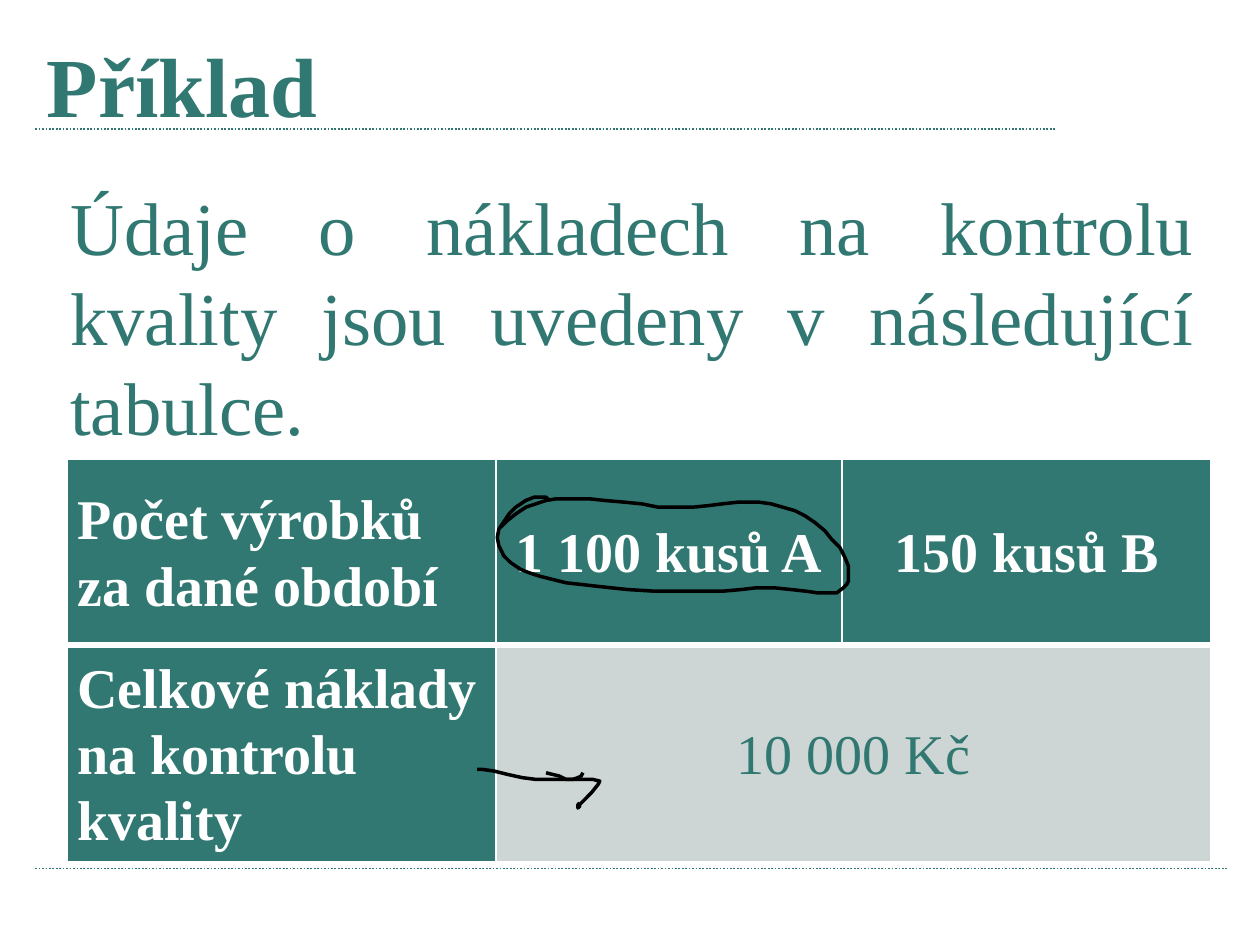
from lxml import etree
from pptx import Presentation
from pptx import util as u
from pptx.dml.color import RGBColor
from pptx.enum import dml, shapes, text
from pptx.oxml import ns

TEAL = RGBColor(0x30, 0x78, 0x71)
PALE = RGBColor(0xCD, 0xD6, 0xD5)
WHITE = RGBColor(0xFF, 0xFF, 0xFF)
BLACK = RGBColor(0, 0, 0)
FONT = "Times New Roman"
LEFT, MID, JUST = text.PP_ALIGN.LEFT, text.PP_ALIGN.CENTER, text.PP_ALIGN.JUSTIFY

WIDE = 7.5
TITLE = "Příklad"
INTRO = "Údaje o nákladech na kontrolu kvality jsou uvedeny v následující tabulce."
ROWS = [
    ["Počet výrobků za dané období", "1\u00a0100 kusů A", "150 kusů B"],
    ["Celkové náklady na kontrolu kvality", "10\u00a0000 Kč"],
]
WIDTHS = [2.55, 2.06, 2.2]
HEIGHTS = [1.11, 1.29]
RULES = [(0.21, 6.29, 0.77), (0.21, 7.31, 5.17)]

HEAD = [
    (3.25, 4.6), (3.29, 4.61), (3.33, 4.62), (3.37, 4.64), (3.53, 4.64),
    (3.57, 4.65), (3.56, 4.67), (3.52, 4.72), (3.48, 4.76), (3.45, 4.79),
    (3.45, 4.8), (3.44, 4.81), (3.44, 4.79), (3.45, 4.78),
]
SHAFT = [
    (2.84, 4.58), (2.87, 4.58), (2.94, 4.59), (3.02, 4.61), (3.11, 4.63),
    (3.19, 4.64), (3.41, 4.64), (3.44, 4.63), (3.46, 4.62), (3.47, 4.6),
]
LOOP = [
    (3.27, 2.98), (3.25, 2.96), (3.18, 2.96), (3.13, 2.98), (3.07, 3.02),
    (3.03, 3.06), (2.99, 3.12), (2.97, 3.15), (2.96, 3.2), (2.97, 3.25),
    (3, 3.31), (3.04, 3.35), (3.1, 3.39), (3.15, 3.41), (3.21, 3.43),
    (3.29, 3.45), (3.37, 3.47), (3.46, 3.48), (3.55, 3.49), (3.64, 3.5),
    (3.74, 3.51), (3.9, 3.52), (4.3, 3.52), (4.41, 3.51), (4.5, 3.5),
    (4.61, 3.5), (4.71, 3.51), (4.8, 3.52), (4.87, 3.53), (4.98, 3.53),
    (5.02, 3.5), (5.04, 3.48), (5.05, 3.46), (5.05, 3.37), (5.03, 3.32),
    (5, 3.26), (4.95, 3.21), (4.91, 3.16), (4.85, 3.11), (4.79, 3.07),
    (4.73, 3.04), (4.66, 3.02), (4.59, 3), (4.52, 2.99), (4.39, 2.99),
    (4.3, 3), (4.22, 3.01), (4.12, 3.02), (3.92, 3.02), (3.82, 3),
    (3.72, 2.99), (3.6, 2.98), (3.51, 2.97), (3.31, 2.97), (3.25, 2.98),
    (3.19, 3), (3.13, 3.02), (3.07, 3.06), (3.02, 3.1), (2.98, 3.14),
]


def write(frame, words, size, color, bold, align, gap=1.0):
    frame.word_wrap = True
    para = frame.paragraphs[0]
    para.text = words
    para.alignment = align
    para.line_spacing = gap
    font = para.font
    font.name, font.size, font.bold = FONT, u.Pt(size), bold
    font.color.rgb = color


def box(slide, place, *style):
    frame = slide.shapes.add_textbox(*map(u.Inches, place)).text_frame
    write(frame, *style)


def rule(slide, left, right, top):
    line = slide.shapes.add_connector(
        shapes.MSO_CONNECTOR.STRAIGHT, *map(u.Inches, (left, top, right, top)))
    line.line.color.rgb = TEAL
    line.line.width = u.Pt(0.75)
    line.line.dash_style = dml.MSO_LINE.ROUND_DOT
    etree.SubElement(line._element.spPr, ns.qn("a:effectLst"))


def edge(cell, widths):
    props = cell._tc.get_or_add_tcPr()
    for spot, (side, wide) in enumerate(zip("LRTB", widths)):
        line = etree.Element(ns.qn("a:ln" + side), w=str(u.Pt(wide)))
        fill = etree.SubElement(line, ns.qn("a:solidFill"))
        etree.SubElement(fill, ns.qn("a:srgbClr"), val=str(WHITE))
        props.insert(spot, line)


def grid(slide):
    place = (0.4, 2.73, sum(WIDTHS), sum(HEIGHTS))
    table = slide.shapes.add_table(
        len(HEIGHTS), len(WIDTHS), *map(u.Inches, place)).table
    for col, wide in zip(table.columns, WIDTHS):
        col.width = u.Inches(wide)
    for row, high in zip(table.rows, HEIGHTS):
        row.height = u.Inches(high)
    table.cell(1, 1).merge(table.cell(1, 2))
    for r, row in enumerate(ROWS):
        for c, words in enumerate(row):
            cell = table.cell(r, c)
            plain = r > 0 and c > 0
            cell.fill.solid()
            cell.fill.fore_color.rgb = PALE if plain else TEAL
            cell.vertical_anchor = text.MSO_ANCHOR.MIDDLE
            cell.margin_left = cell.margin_right = u.Inches(0.06)
            cell.margin_top = cell.margin_bottom = 0
            write(cell.text_frame, words, 24, TEAL if plain else WHITE,
                  not plain, MID if c else LEFT, 1.07)
    for r in range(len(HEIGHTS)):
        for c in range(len(WIDTHS)):
            edge(table.cell(r, c), (1, 1, 3, 1) if r else (1, 1, 1, 3))


def stroke(parent, points):
    start, *rest = [(u.Inches(x), u.Inches(y)) for x, y in points]
    pen = parent.shapes.build_freeform(*start)
    pen.add_line_segments(rest, close=False)
    shape = pen.convert_to_shape()
    shape.shadow.inherit = False
    shape.fill.background()
    shape.line.color.rgb = BLACK
    shape.line.width = u.Pt(1.5)


def main():
    deck = Presentation()
    deck.slide_width, deck.slide_height = u.Inches(WIDE), u.Inches(WIDE * 3 / 4)
    slide = deck.slides.add_slide(deck.slide_layouts[6])
    for ends in RULES:
        rule(slide, *ends)
    box(slide, (0.18, 0.15, 6.61, 0.59), TITLE, 36, TEAL, True, LEFT)
    box(slide, (0.32, 1.03, 6.89, 1.94), INTRO, 32, TEAL, False, JUST)
    grid(slide)
    arrow = slide.shapes.add_group_shape()
    stroke(arrow, HEAD)
    stroke(arrow, SHAFT)
    stroke(slide, LOOP)
    deck.save("out.pptx")


if __name__ == "__main__":
    main()
